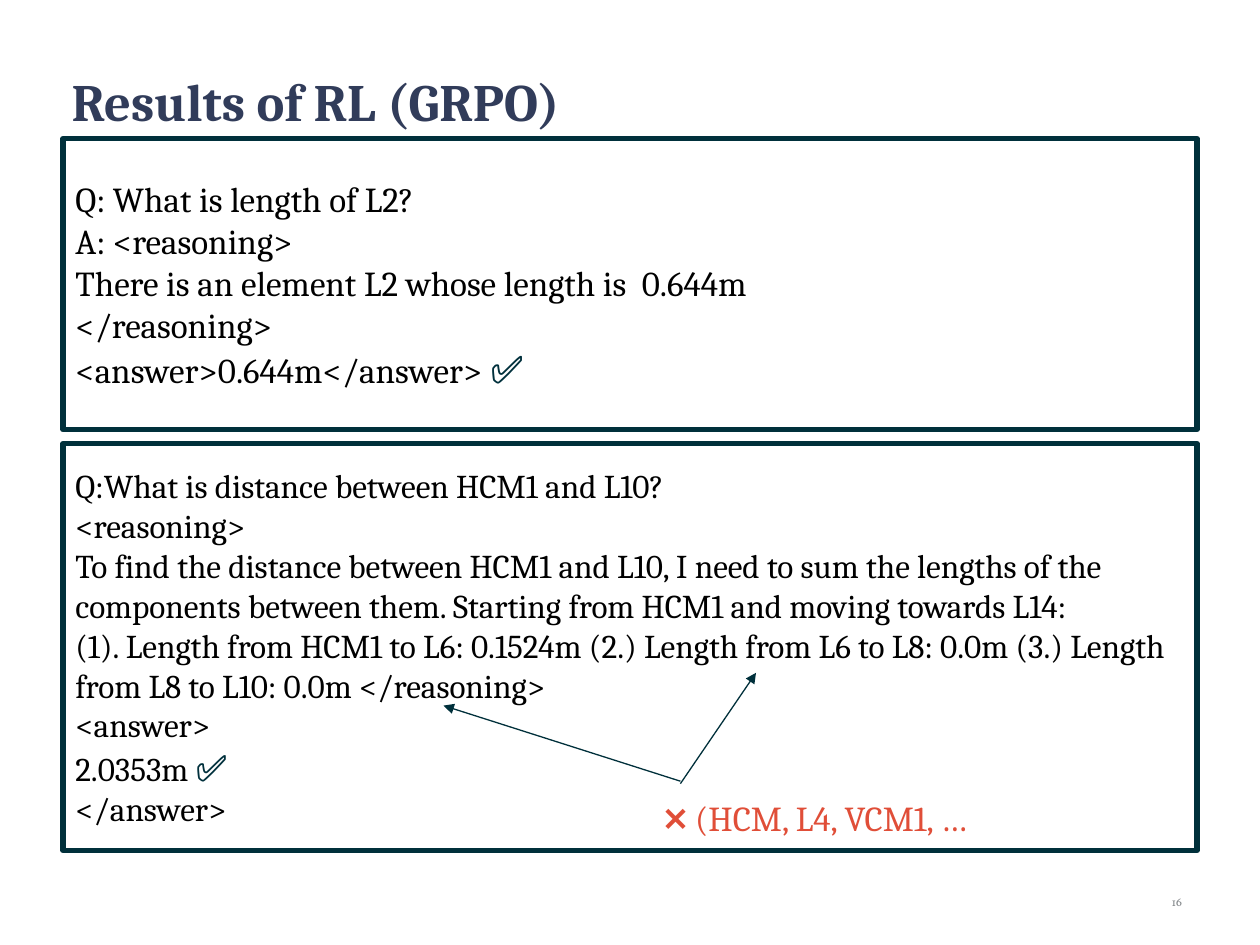
"""Build a slide showing two question and answer results of RL training."""
from lxml.etree import SubElement
from pptx import Presentation
from pptx.dml.color import RGBColor
from pptx.enum.shapes import MSO_CONNECTOR, MSO_SHAPE
from pptx.enum.text import MSO_ANCHOR, PP_ALIGN
from pptx.oxml.ns import qn
from pptx.util import Inches, Pt

COLORS = {
    "title": "313C5A", "border": "00303B", "check": "00303C",
    "text": "000000", "error": "E04E38", "number": "888C8F",
}
FONT, NUMBER_FONT = "Cambria", "EB Garamond"
CHECK = "✅"

TITLE = "Results of RL (GRPO)"
NUMBER = "16"
NOTE = "❌ (HCM, L4, VCM1, …"
PANELS = [
    {"top": 1.1, "height": 2.31, "size": 20, "lines": [
        "Q: What is length of L2?",
        "A: <reasoning>",
        "There is an element L2 whose length is  0.644m",
        "</reasoning>",
        "<answer>0.644m</answer> " + CHECK,
    ]},
    {"top": 3.52, "height": 3.23, "size": 19, "lines": [
        "Q:What is distance between HCM1 and L10?",
        "<reasoning>",
        "To find the distance between HCM1 and L10, I need to sum the lengths of "
        "the components between them. Starting from HCM1 and moving towards L14:",
        "(1). Length from HCM1 to L6: 0.1524m (2.) Length from L6 to L8: 0.0m "
        "(3.) Length from L8 to L10: 0.0m </reasoning>",
        "<answer>",
        "2.0353m " + CHECK,
        "</answer>",
    ]},
]
ARROWS = [((5.4, 6.22), (6, 5.34)), ((5.4, 6.2), (3.52, 5.6))]


def rgb(name):
    return RGBColor.from_string(COLORS[name])


def add_run(p, text, size, color, font=FONT, bold=False):
    r = p.add_run()
    r.text = text
    r.font.size, r.font.name, r.font.bold = Pt(size), font, bold
    r.font.color.rgb = rgb(color)


def set_frame(tf, anchor, margin):
    tf.word_wrap = True
    tf.vertical_anchor = anchor
    tf.margin_left = tf.margin_right = Inches(0.1)
    tf.margin_top = tf.margin_bottom = Inches(margin)


def add_label(s, box, text, size, color, margin=0.05, anchor=MSO_ANCHOR.TOP,
              align=PP_ALIGN.LEFT, **style):
    tf = s.shapes.add_textbox(*map(Inches, box)).text_frame
    set_frame(tf, anchor, margin)
    p = tf.paragraphs[0]
    p.alignment = align
    add_run(p, text, size, color, **style)


def add_panel(s, panel):
    box = (0.5, panel["top"], 9, panel["height"])
    sp = s.shapes.add_shape(MSO_SHAPE.RECTANGLE, *map(Inches, box))
    sp.shadow.inherit = False
    sp.fill.background()
    sp.line.color.rgb = rgb("border")
    sp.line.width = Pt(3)
    tf = sp.text_frame
    set_frame(tf, MSO_ANCHOR.MIDDLE, 0.1)
    for i, line in enumerate(panel["lines"]):
        p = tf.add_paragraph() if i else tf.paragraphs[0]
        p.alignment = PP_ALIGN.LEFT
        text, check, _ = line.partition(CHECK)
        add_run(p, text, panel["size"], "text")
        if check:
            add_run(p, check, panel["size"] + 2, "check")


def add_arrow(s, start, end):
    line = s.shapes.add_connector(MSO_CONNECTOR.STRAIGHT, *map(Inches, start + end))
    line.line.color.rgb = rgb("border")
    line.line.width = Pt(0.75)
    SubElement(line.line._get_or_add_ln(), qn("a:tailEnd"), type="triangle")
    SubElement(line._element.spPr, qn("a:effectLst"))


def main():
    prs = Presentation()
    prs.slide_width, prs.slide_height = Inches(10), Inches(7.5)
    s = prs.slides.add_slide(prs.slide_layouts[6])
    add_label(s, (0.47, 0.5, 9, 0.6), TITLE, 30, "title", bold=True)
    add_label(s, (8.9, 6.95, 0.58, 0.4), NUMBER, 7.5, "number",
              anchor=MSO_ANCHOR.MIDDLE, align=PP_ALIGN.RIGHT, font=NUMBER_FONT)
    for panel in PANELS:
        add_panel(s, panel)
    for start, end in ARROWS:
        add_arrow(s, start, end)
    add_label(s, (5.17, 6.22, 3.73, 0.54), NOTE, 20, "error", margin=0.1)
    prs.save("out.pptx")


if __name__ == "__main__":
    main()
